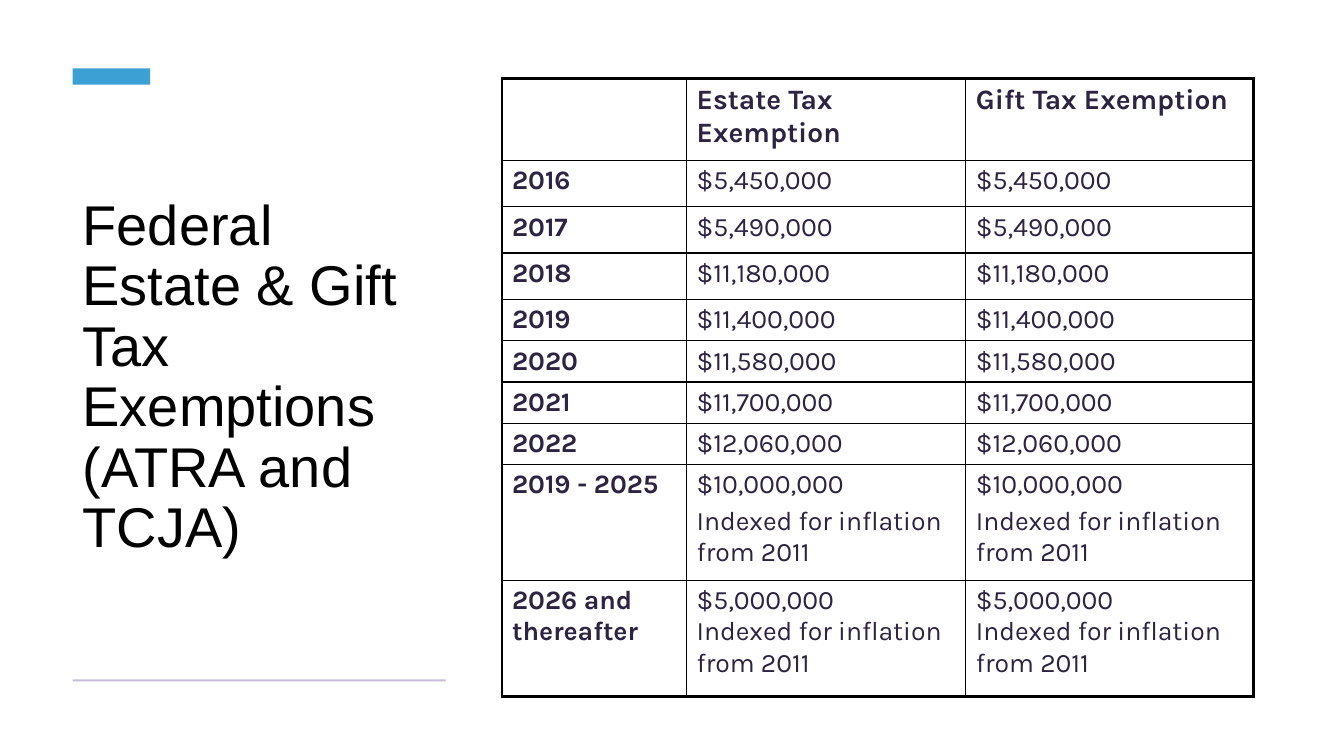
from lxml.etree import SubElement
from pptx import Presentation
from pptx.dml.color import RGBColor
from pptx.enum.shapes import MSO_SHAPE
from pptx.enum.text import MSO_ANCHOR, PP_ALIGN
from pptx.oxml.ns import qn
from pptx.util import Inches, Pt

BLACK = RGBColor(0x00, 0x00, 0x00)
BLUE = RGBColor(0x3C, 0xA0, 0xD4)
LILAC = RGBColor(0xC6, 0xBD, 0xDB)
INK = RGBColor(0x2D, 0x24, 0x41)

THIN, THICK = Pt(1), Pt(2.25)
LEFT, LEFT_WIDTH = 0.72, 3.7
COLUMN_WIDTHS = [1.83, 2.77, 2.85]
ROW_HEIGHTS = [0.81] + [0.46] * 3 + [0.41] * 4 + [1.15] * 2

INDEXED = "Indexed for inflation from 2011"
EXEMPTIONS = [
    ("2016", "$5,450,000"),
    ("2017", "$5,490,000"),
    ("2018", "$11,180,000"),
    ("2019", "$11,400,000"),
    ("2020", "$11,580,000"),
    ("2021", "$11,700,000"),
    ("2022", "$12,060,000"),
    ("2019 - 2025", "$10,000,000\n" + INDEXED),
    ("2026 and thereafter", "$5,000,000\n" + INDEXED),
]
ROWS = [("", "Estate Tax Exemption", "Gift Tax Exemption")]
ROWS += [(year, amount, amount) for year, amount in EXEMPTIONS]


def write(frame, text, font="Karla", size=19, color=INK, bold=False, line=1.0, gap=0):
    """Fill a text frame; gap is the space in points before each later paragraph."""
    frame.text = text
    frame.word_wrap = True
    for index, para in enumerate(frame.paragraphs):
        para.alignment = PP_ALIGN.LEFT
        para.line_spacing = line
        para.space_before = Pt(gap if index else 0)
        para.font.size = Pt(size)
        for span in para.runs:
            span.font.name = font
            span.font.size = Pt(size)
            span.font.bold = bold
            span.font.color.rgb = color


def set_borders(cell, **widths):
    properties = cell._tc.get_or_add_tcPr()
    for side in "LRTB":
        border = SubElement(properties, qn("a:ln" + side), w=str(int(widths[side])))
        fill = SubElement(border, qn("a:solidFill"))
        SubElement(fill, qn("a:srgbClr"), val=str(BLACK))


deck = Presentation()
deck.slide_width, deck.slide_height = Inches(13.33), Inches(7.5)
page = deck.slides.add_slide(deck.slide_layouts[5])

title = page.shapes.title
title.left, title.top = Inches(LEFT), Inches(1.05)
title.width, title.height = Inches(LEFT_WIDTH), Inches(5.41)
write(title.text_frame, "Federal Estate & Gift Tax Exemptions \v(ATRA and TCJA)",
      font="Arial", size=40, color=BLACK, line=0.9)
title.text_frame.vertical_anchor = MSO_ANCHOR.MIDDLE

for top, width, height, color in [(0.68, 0.77, 0.16, BLUE), (6.74, LEFT_WIDTH, 0.02, LILAC)]:
    bar = page.shapes.add_shape(MSO_SHAPE.RECTANGLE, Inches(LEFT), Inches(top),
                                Inches(width), Inches(height))
    bar.shadow.inherit = False
    bar.fill.solid()
    bar.fill.fore_color.rgb = color
    bar.line.fill.background()

last_row, last_column = len(ROWS) - 1, len(COLUMN_WIDTHS) - 1
table = page.shapes.add_table(len(ROWS), len(COLUMN_WIDTHS), Inches(4.98), Inches(0.78),
                              Inches(sum(COLUMN_WIDTHS)), Inches(sum(ROW_HEIGHTS))).table
table.first_row = table.horz_banding = False
for column, width in zip(table.columns, COLUMN_WIDTHS):
    column.width = Inches(width)

for r, (texts, height) in enumerate(zip(ROWS, ROW_HEIGHTS)):
    table.rows[r].height = Inches(height)
    for c, text in enumerate(texts):
        cell = table.cell(r, c)
        write(cell.text_frame, text, size=19 if r else 20, bold=r == 0 or c == 0,
              gap=0 if r == last_row else 4)
        set_borders(cell,
                    L=THICK if c == 0 else THIN,
                    R=THICK if c == last_column else THIN,
                    T=THICK if r == 0 else THIN,
                    B=THICK if r == last_row else THIN)
        cell.fill.background()

deck.save("out.pptx")
